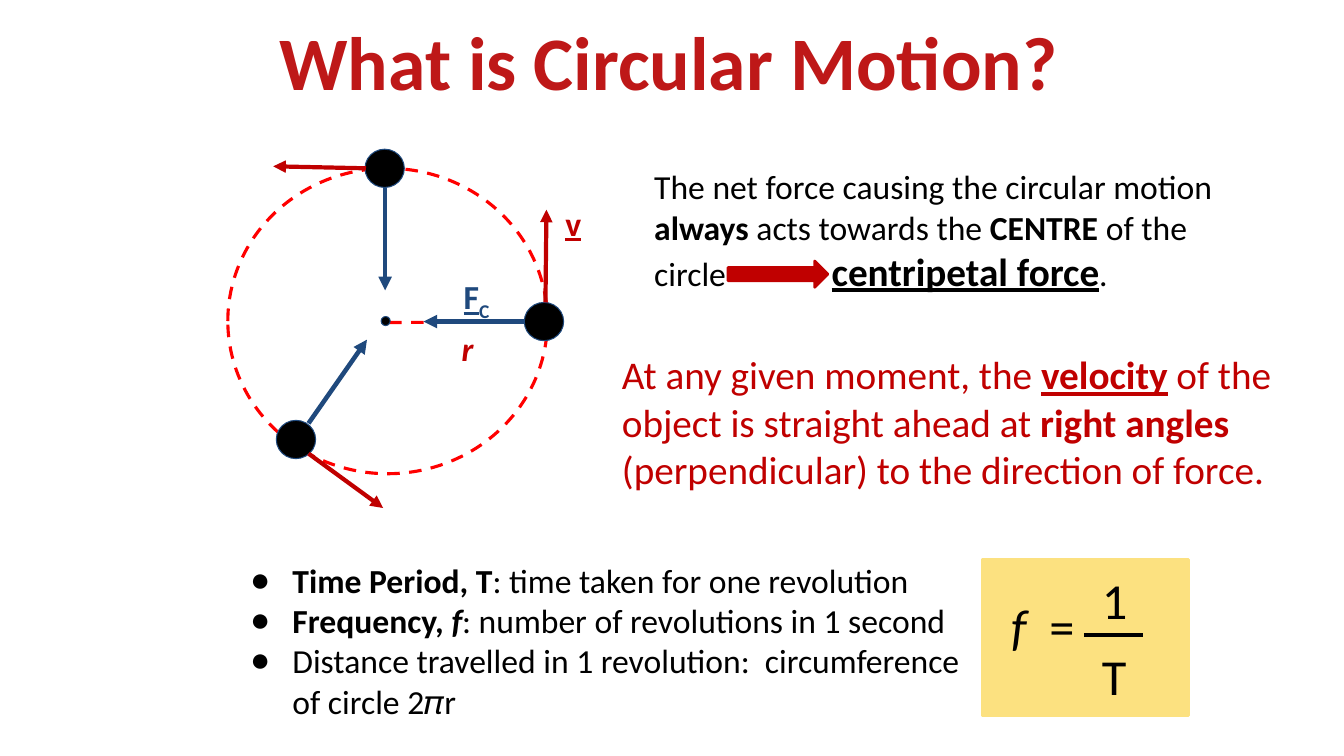
from lxml import etree
from pptx import Presentation
from pptx import util as u
from pptx.dml.color import RGBColor
from pptx.enum import dml, shapes, text
from pptx.oxml.ns import qn

PX = u.Inches(1) // 100  # 100 px to the inch
COLORS = {"title": "BE1818", "red": "C00000", "orbit": "FF0000",
          "blue": "1F497D", "black": "000000", "yellow": "FCE180"}

BOLD = {"bold": True}
LINK = {"bold": True, "underline": True}

TITLE = [[("What is Circular Motion?", BOLD)]]
DEFINITIONS = [
    [("Time Period, T", BOLD), (": time taken for one revolution", {})],
    [("Frequency, ", BOLD), ("f", {"bold": True, "italic": True}),
     (": number of revolutions in 1 second", {})],
    [("Distance travelled in 1 revolution:  circumference of circle 2𝜋r", {})],
]
# box, paragraphs, format
TEXTS = [
    ((450, 264, 52, 48), [[("F", LINK), ("C", {"bold": True, "baseline": -25})]],
     {"color": "blue"}),
    ((551, 191, 39, 48), [[("v", LINK)]], {"color": "red"}),
    ((448, 315, 39, 38), [[("r", {"bold": True, "italic": True})]], {"color": "red"}),
    ((607, 338, 681, 189),
     [[("At any given moment, the ", {}), ("velocity", LINK),
       (" of the object is straight ahead at ", {}), ("right angles", BOLD),
       (" (perpendicular) to the direction of force.", {})]],
     {"color": "red", "size": 28}),
    ((639, 155, 618, 142),
     [[("The net force causing the circular motion ", {}), ("always", BOLD),
       (" acts towards the ", {}), ("CENTRE", BOLD), (" of the circle\t", {}),
       ("centripetal force", {**LINK, "size": 28}), (".", {})]],
     {"tab": 176}),
]
FORMULA = [
    ((993, 580, 109, 105), [[("f ", {"italic": True}), (" =", {})]]),
    ((1083, 555, 52, 64), [[("1", {})]]),
    ((1083, 630, 52, 64), [[("T", {})]]),
]
ORBIT = (226, 167, 317, 303)
BALLS = [(540, 319), (382, 167), (293, 436)]  # centres
BALL_SIZE = (39, 38)
CENTRE, CENTRE_SIZE = (383, 319), (9, 9)
FORCES = [(521, 319, 420, 319), (382, 187, 382, 288), (306, 420, 364, 337)]
VELOCITIES = [(541, 300, 542, 208), (363, 167, 271, 165), (306, 450, 380, 504)]
RADIUS = (386, 320, 542, 319)
FRACTION_BAR = (1075, 630, 1134, 630)


def rgb(name):
    return RGBColor.from_string(COLORS[name])


def scaled(lengths):
    return [length * PX for length in lengths]


def write(frame, paragraphs, size=24, color="black", inset=10, tab=None,
          bullet=None, anchor=text.MSO_ANCHOR.TOP):
    """Fill a text frame with paragraphs of (text, font attributes) spans."""
    frame.word_wrap = True
    frame.auto_size = text.MSO_AUTO_SIZE.NONE
    frame.vertical_anchor = anchor
    frame.margin_left = frame.margin_right = inset * PX
    frame.margin_top = frame.margin_bottom = min(inset, 10) * PX
    for index, spans in enumerate(paragraphs):
        para = frame.add_paragraph() if index else frame.paragraphs[0]
        para.alignment = text.PP_ALIGN.LEFT
        para.space_before = u.Pt(0)
        properties = para._p.get_or_add_pPr()
        if bullet:
            properties.set("marL", str(50 * PX))
            properties.set("indent", str(-42 * PX))
            etree.SubElement(properties, qn("a:buChar"), char=bullet)
        if tab:
            stops = etree.SubElement(properties, qn("a:tabLst"))
            etree.SubElement(stops, qn("a:tab"), pos=str(tab * PX), algn="l")
        for words, style in spans:
            span = para.add_run()
            span.text = words
            span.font.name = "Calibri"
            span.font.size = u.Pt(style.get("size", size))
            span.font.color.rgb = rgb(color)
            span.font.bold = style.get("bold", False)
            span.font.italic = style.get("italic", False)
            span.font.underline = style.get("underline", False)
            if "baseline" in style:
                span._r.get_or_add_rPr().set("baseline", str(style["baseline"] * 1000))


def place(holder, box):
    holder.left, holder.top, holder.width, holder.height = scaled(box)


def add_text(slide, box, paragraphs, fill=None, **form):
    textbox = slide.shapes.add_textbox(*scaled(box))
    if fill:
        textbox.fill.solid()
        textbox.fill.fore_color.rgb = rgb(fill)
    write(textbox.text_frame, paragraphs, **form)


def add_figure(slide, kind, box, fill, line, width, dashed=False):
    figure = slide.shapes.add_shape(kind, *scaled(box))
    figure.shadow.inherit = False
    if fill:
        figure.fill.solid()
        figure.fill.fore_color.rgb = rgb(fill)
    else:
        figure.fill.background()
    style_line(figure.line, line, width, dashed)


def add_disc(slide, centre, size):
    box = (centre[0] - size[0] / 2, centre[1] - size[1] / 2, *size)
    add_figure(slide, shapes.MSO_SHAPE.OVAL, [round(v) for v in box],
               "black", "blue", 0.75)


def style_line(line, color, width, dashed=False):
    line.color.rgb = rgb(color)
    line.width = u.Pt(width)
    if dashed:
        line.dash_style = dml.MSO_LINE.DASH


def add_line(slide, ends, color, width, dashed=False, arrow=False):
    connector = slide.shapes.add_connector(shapes.MSO_CONNECTOR.STRAIGHT, *scaled(ends))
    style_line(connector.line, color, width, dashed)
    if arrow:
        etree.SubElement(connector.line._get_or_add_ln(), qn("a:tailEnd"), type="triangle")
    etree.SubElement(connector._element.spPr, qn("a:effectLst"))


def main():
    deck = Presentation()
    deck.slide_width, deck.slide_height = scaled((1333, 750))
    slide = deck.slides.add_slide(deck.slide_layouts[1])

    title, body = slide.placeholders
    place(title, (267, 10, 955, 100))
    write(title.text_frame, TITLE, size=54, color="title",
          anchor=text.MSO_ANCHOR.MIDDLE)
    place(body, (230, 545, 744, 179))
    write(body.text_frame, DEFINITIONS, bullet="●")

    add_figure(slide, shapes.MSO_SHAPE.OVAL, ORBIT, None, "orbit", 2.25, dashed=True)
    add_line(slide, RADIUS, "orbit", 2.25, dashed=True)
    add_disc(slide, CENTRE, CENTRE_SIZE)
    for ball, force, velocity in zip(BALLS, FORCES, VELOCITIES):
        add_disc(slide, ball, BALL_SIZE)
        add_line(slide, force, "blue", 3.25, arrow=True)
        add_line(slide, velocity, "red", 3, arrow=True)

    for box, paragraphs, form in TEXTS:
        add_text(slide, box, paragraphs, **form)
    add_figure(slide, shapes.MSO_SHAPE.RIGHT_ARROW, (722, 259, 99, 26), "red", "red", 2)

    add_figure(slide, shapes.MSO_SHAPE.RECTANGLE, (975, 555, 204, 155),
               "yellow", "yellow", 2.25)
    for box, paragraphs in FORMULA:
        add_text(slide, box, paragraphs, fill="yellow", size=36)
    add_line(slide, FRACTION_BAR, "black", 2.25)
    deck.save("out.pptx")


if __name__ == "__main__":
    main()
